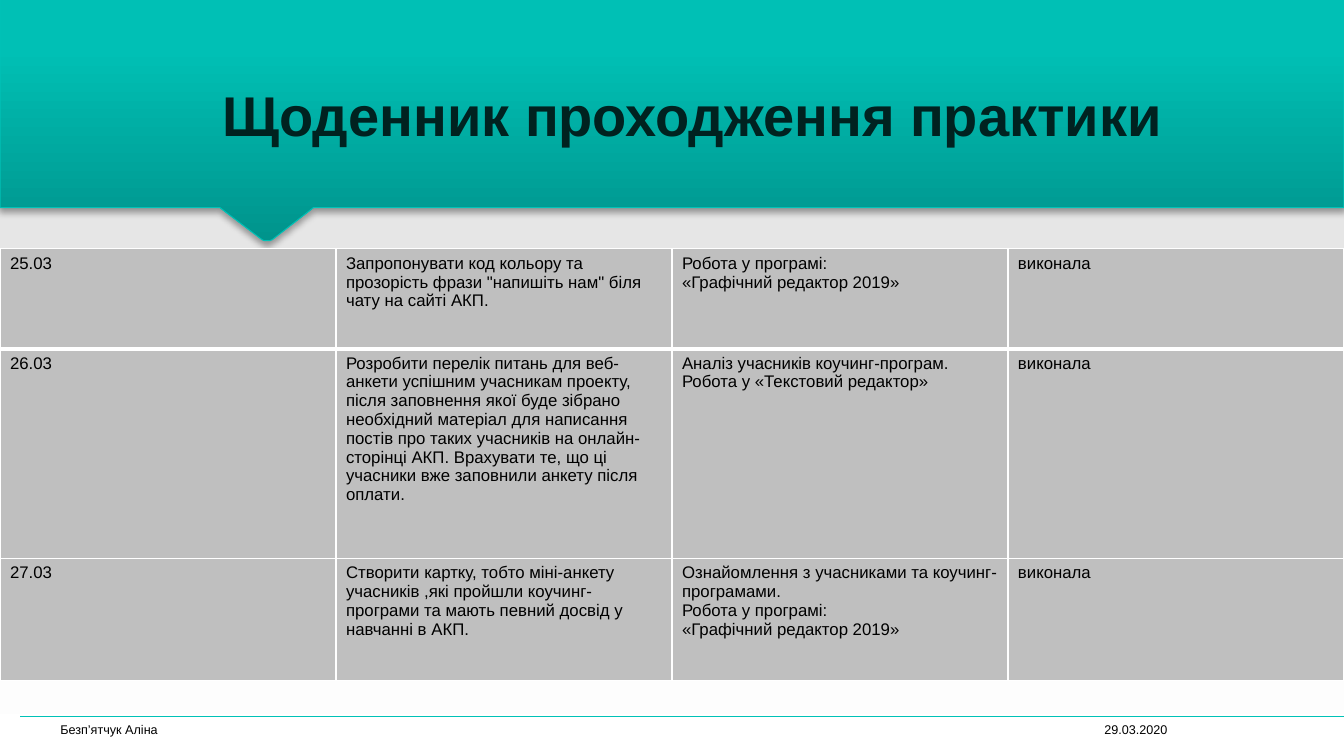
from lxml.etree import SubElement as Sub
from pptx import Presentation as Deck
from pptx.dml.color import RGBColor as RGB
from pptx.enum.shapes import MSO_CONNECTOR as Conn
from pptx.enum.text import MSO_ANCHOR as Anchor, PP_ALIGN as Align
from pptx.oxml.ns import qn
from pptx.util import Pt

WIDE, HIGH = 960, 540
BLACK = RGB(0, 0, 0)
WHITE = RGB(0xFF, 0xFF, 0xFF)
MIST = RGB(0xDB, 0xDB, 0xDB)
GREY = RGB(0xBF, 0xBF, 0xBF)
TEAL = RGB(0x00, 0xC2, 0xB7)
DEEP = RGB(0x00, 0x94, 0x8C)
MID = RGB(0x00, 0xC0, 0xB5)
LIGHT = RGB(0x00, 0xC1, 0xB6)
INK = RGB(0x00, 0x22, 0x20)

BODY = {"name": "Arial", "size": Pt(12), "bold": False}
SMALL = {**BODY, "size": Pt(9)}
HEAD = {**BODY, "size": Pt(40), "bold": True}

TITLE = "Щоденник проходження практики"
NAME, DATE = "Безп’ятчук Аліна", "29.03.2020"
TOOL = "Робота у програмі:\n«Графічний редактор 2019»"
DONE = "виконала"
ROWS = [
    (71.3, "25.03",
     "Запропонувати код кольору та прозорість фрази \"напишіть нам\" біля "
     "чату на сайті АКП.",
     TOOL),
    (149.8, "26.03",
     "Розробити перелік питань для веб-анкети успішним учасникам проекту, "
     "після заповнення якої буде зібрано необхідний матеріал для написання "
     "постів про таких учасників на онлайн-сторінці АКП. Врахувати те, що ці "
     "учасники вже заповнили анкету після оплати.",
     "Аналіз учасників коучинг-програм.\nРобота у «Текстовий редактор»"),
    (87.1, "27.03",
     "Створити картку, тобто міні-анкету учасників ,які пройшли "
     "коучинг-програми та мають певний досвід у навчанні в АКП.",
     "Ознайомлення з учасниками та коучинг-програмами.\n" + TOOL),
]


def blend(fill, root, angle, stops):
    """Fill with a linear gradient of any number of stops."""
    fill.gradient()
    fill.gradient_angle = angle
    bag = root.find(".//" + qn("a:gsLst"))
    for old in list(bag):
        bag.remove(old)
    for place, tone in stops:
        stop = Sub(bag, qn("a:gs"), pos=str(place * 1000))
        Sub(stop, qn("a:srgbClr"), val=str(tone))


def shade(node, blur, dist, angle, alpha):
    """Add an outer shadow to an effect list."""
    shadow = Sub(node, qn("a:outerShdw"), blurRad=str(Pt(blur)),
                 dist=str(Pt(dist)), dir=str(angle * 60000),
                 algn="tl", rotWithShape="0")
    tone = Sub(shadow, qn("a:srgbClr"), val=str(BLACK))
    Sub(tone, qn("a:alpha"), val=str(alpha * 1000))


def write(frame, text, style, tone=BLACK, align=Align.LEFT):
    frame.word_wrap = True
    frame.text = text
    for para in frame.paragraphs:
        para.alignment = align
        for run in para.runs:
            for key, value in style.items():
                setattr(run.font, key, value)
            run.font.color.rgb = tone


def label(slide, box, *args):
    frame = slide.shapes.add_textbox(*map(Pt, box)).text_frame
    frame.vertical_anchor = Anchor.BOTTOM
    write(frame, *args)
    return frame


def banner(slide, x, y, w, h):
    """Header band with a rounded pointer, and the title on it."""
    edge, tip = y + h - 23.7, y + h
    points = [(x, y), (x, edge), (x + 157, edge), (x + 187.2, tip - 0.7),
              (x + 189, tip), (x + 192.5, tip), (x + 194.4, tip - 0.7),
              (x + 224, edge), (x + w, edge)]
    pen = slide.shapes.build_freeform(Pt(x + w), Pt(y))
    pen.add_line_segments([(Pt(a), Pt(b)) for a, b in points], close=True)
    band = pen.convert_to_shape()
    blend(band.fill, band.element, 90, [(0, DEEP), (80, MID), (100, LIGHT)])
    band.line.color.rgb = TEAL
    band.line.width = Pt(0.75)
    band.shadow.inherit = False
    shade(band.element.spPr.find(qn("a:effectLst")), 3.1, 1.8, 90, 35)

    frame = label(slide, (x + 92.9, y + 32.4, 802.8, 76.3),
                  TITLE, HEAD, INK, Align.CENTER)
    props = frame.paragraphs[0].runs[0].font._element
    glow = Sub(props, qn("a:effectLst"))
    props.find(qn("a:solidFill")).addnext(glow)
    shade(glow, 3, 3, 45, 50)


def border(cell, below):
    """White lines round a cell; the bottom one has its own width."""
    props = cell._tc.get_or_add_tcPr()
    for spot, (side, width) in enumerate(zip("LRTB", (1, 1, 1, below))):
        line = Sub(props, qn("a:ln" + side), w=str(Pt(width)))
        Sub(Sub(line, qn("a:solidFill")), qn("a:srgbClr"), val=str(WHITE))
        props.insert(spot, line)


def diary(slide, x, y, w):
    """Table of days, tasks, tools and status."""
    high = sum(row[0] for row in ROWS)
    table = slide.shapes.add_table(len(ROWS), 4, Pt(x), Pt(y),
                                   Pt(w), Pt(high)).table
    table.first_row = table.horz_banding = False
    for col in table.columns:
        col.width = Pt(w / 4)
    for i, (tall, *texts) in enumerate(ROWS):
        table.rows[i].height = Pt(tall)
        for j, text in enumerate(texts + [DONE]):
            cell = table.cell(i, j)
            cell.fill.solid()
            cell.fill.fore_color.rgb = GREY
            border(cell, 1 if i else 3)
            write(cell.text_frame, text, BODY)


def rule(slide, x, y, w):
    line = slide.shapes.add_connector(Conn.STRAIGHT, Pt(x), Pt(y),
                                      Pt(x + w), Pt(y))
    line.line.color.rgb = TEAL
    line.line.width = Pt(0.75)
    Sub(line.element.spPr, qn("a:effectLst"))


def footer(slide, x, y, h):
    """Author on the left, date on the right."""
    label(slide, (x, y, 680.4, h), NAME, SMALL)
    label(slide, (x + 699.1, y, 105.8, h), DATE, SMALL, BLACK, Align.RIGHT)


def main():
    deck = Deck()
    deck.slide_width, deck.slide_height = Pt(WIDE), Pt(HIGH)
    slide = deck.slides.add_slide(deck.slide_layouts[6])
    blend(slide.background.fill, slide.element, 270,
          [(0, MIST), (100, WHITE)])
    rule(slide, 14.4, 511.9, WIDE - 14.4)
    banner(slide, 0, 0, WIDE, 172)
    diary(slide, 0, 177.8, WIDE)
    footer(slide, 36, 501.1, 28.8)
    deck.save("out.pptx")


if __name__ == "__main__":
    main()
